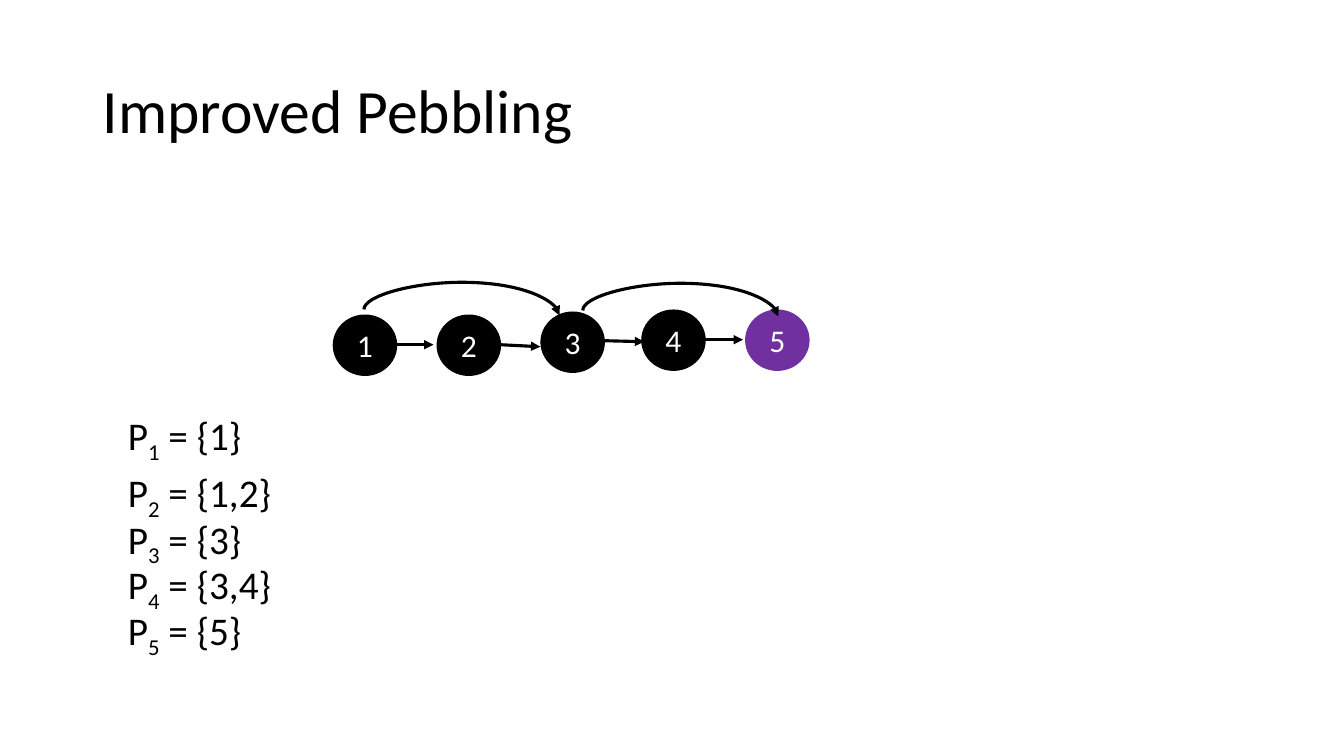
from dataclasses import dataclass

from lxml.etree import SubElement
from pptx import Presentation
from pptx.dml.color import RGBColor
from pptx.enum.shapes import MSO_CONNECTOR, MSO_SHAPE
from pptx.enum.text import MSO_ANCHOR, MSO_AUTO_SIZE, PP_ALIGN
from pptx.oxml.ns import qn
from pptx.shapes.connector import Connector
from pptx.slide import Slide
from pptx.text.text import _Paragraph
from pptx.util import Emu, Pt

FONT = "Calibri"
BLACK = "000000"
WHITE = "FFFFFF"
PURPLE = "7030A0"
NODE_WIDTH, NODE_HEIGHT = 64, 61
ARC_SPAN, ARC_DROP = 194, 6


@dataclass
class Node:
    label: str
    left: int
    top: int
    fill: str = BLACK


@dataclass
class Arrow:
    x: int
    y: int
    drop: int = 0
    length: int = 40


@dataclass
class Arc:
    x: int
    y: int


@dataclass
class PebbleSet:
    index: str
    members: str
    top: int
    width: int


NODES = [
    Node("1", 330, 312),
    Node("2", 433, 312),
    Node("3", 536, 309),
    Node("4", 636, 307),
    Node("5", 739, 307, PURPLE),
]
ARROWS = [Arrow(390, 342), Arrow(496, 342, 2), Arrow(599, 338, 1), Arrow(697, 337)]
ARCS = [Arc(361, 307), Arc(578, 308)]
PEBBLE_SETS = [
    PebbleSet("1", "1", 403, 136),
    PebbleSet("2", "1,2", 460, 166),
    PebbleSet("3", "3", 506, 136),
    PebbleSet("4", "3,4", 551, 166),
    PebbleSet("5", "5", 597, 136),
]


def px(length: int) -> Emu:
    """Convert px, at 100 to the inch, into EMU."""
    return Emu(length * 9144)


def color(value: str) -> RGBColor:
    return RGBColor.from_string(value)


def add_span(para: _Paragraph, text: str, size: float, ink: str = BLACK, baseline: int = 0) -> None:
    """Add a run; baseline is its shift in percent of the text size."""
    span = para.add_run()
    span.text = text
    span.font.name = FONT
    span.font.size = Pt(size)
    span.font.color.rgb = color(ink)
    if baseline:
        span.font._element.set("baseline", str(baseline * 1000))


def add_title(page: Slide, text: str) -> None:
    title = page.shapes.title
    title.left, title.top, title.width, title.height = px(92), px(40), px(1150), px(145)
    frame = title.text_frame
    frame.auto_size = MSO_AUTO_SIZE.NONE
    frame.vertical_anchor = MSO_ANCHOR.MIDDLE
    para = frame.paragraphs[0]
    para.alignment = PP_ALIGN.LEFT
    para.line_spacing = 0.9
    add_span(para, text, 44)


def add_pebble_set(page: Slide, pebbles: PebbleSet) -> None:
    box = page.shapes.add_textbox(px(117), px(pebbles.top), px(pebbles.width), px(57))
    frame = box.text_frame
    frame.word_wrap = False
    frame.auto_size = MSO_AUTO_SIZE.SHAPE_TO_FIT_TEXT
    para = frame.paragraphs[0]
    add_span(para, "P", 28)
    add_span(para, pebbles.index, 28, baseline=-25)
    add_span(para, f" = {{{pebbles.members}}}", 28)


def add_node(page: Slide, node: Node) -> None:
    circle = page.shapes.add_shape(
        MSO_SHAPE.OVAL, px(node.left), px(node.top), px(NODE_WIDTH), px(NODE_HEIGHT)
    )
    circle.shadow.inherit = False
    circle.fill.solid()
    circle.fill.fore_color.rgb = color(node.fill)
    circle.line.fill.background()
    frame = circle.text_frame
    frame.vertical_anchor = MSO_ANCHOR.MIDDLE
    para = frame.paragraphs[0]
    para.alignment = PP_ALIGN.CENTER
    add_span(para, node.label, 22.5, WHITE)


def style_edge(edge: Connector) -> None:
    edge.line.color.rgb = color(BLACK)
    edge.line.width = Pt(2.25)
    SubElement(edge.line._get_or_add_ln(), qn("a:tailEnd"), type="triangle")
    SubElement(edge._element.spPr, qn("a:effectLst"))


def add_arrow(page: Slide, arrow: Arrow) -> None:
    edge = page.shapes.add_connector(
        MSO_CONNECTOR.STRAIGHT,
        px(arrow.x), px(arrow.y), px(arrow.x + arrow.length), px(arrow.y + arrow.drop),
    )
    style_edge(edge)


def add_arc(page: Slide, arc: Arc) -> None:
    """Draw a curve that rises from its start, by turning an upright connector on its side."""
    center_x, center_y = arc.x + ARC_SPAN // 2, arc.y + ARC_DROP // 2
    half_width, half_height = ARC_DROP // 2, ARC_SPAN // 2
    edge = page.shapes.add_connector(
        MSO_CONNECTOR.CURVE,
        px(center_x + half_width), px(center_y - half_height),
        px(center_x - half_width), px(center_y + half_height),
    )
    properties = edge._element.spPr
    properties.find(qn("a:xfrm")).set("rot", str(270 * 60000))
    adjustments = properties.find(qn("a:prstGeom")).find(qn("a:avLst"))
    SubElement(adjustments, qn("a:gd"), name="adj1", fmla="val -450000")
    style_edge(edge)


def main() -> None:
    deck = Presentation()
    deck.slide_width, deck.slide_height = px(1333), px(750)
    page = deck.slides.add_slide(deck.slide_layouts[5])
    add_title(page, "Improved Pebbling")
    for pebbles in PEBBLE_SETS:
        add_pebble_set(page, pebbles)
    for node in NODES:
        add_node(page, node)
    for arrow in ARROWS:
        add_arrow(page, arrow)
    for arc in ARCS:
        add_arc(page, arc)
    deck.save("out.pptx")


if __name__ == "__main__":
    main()
